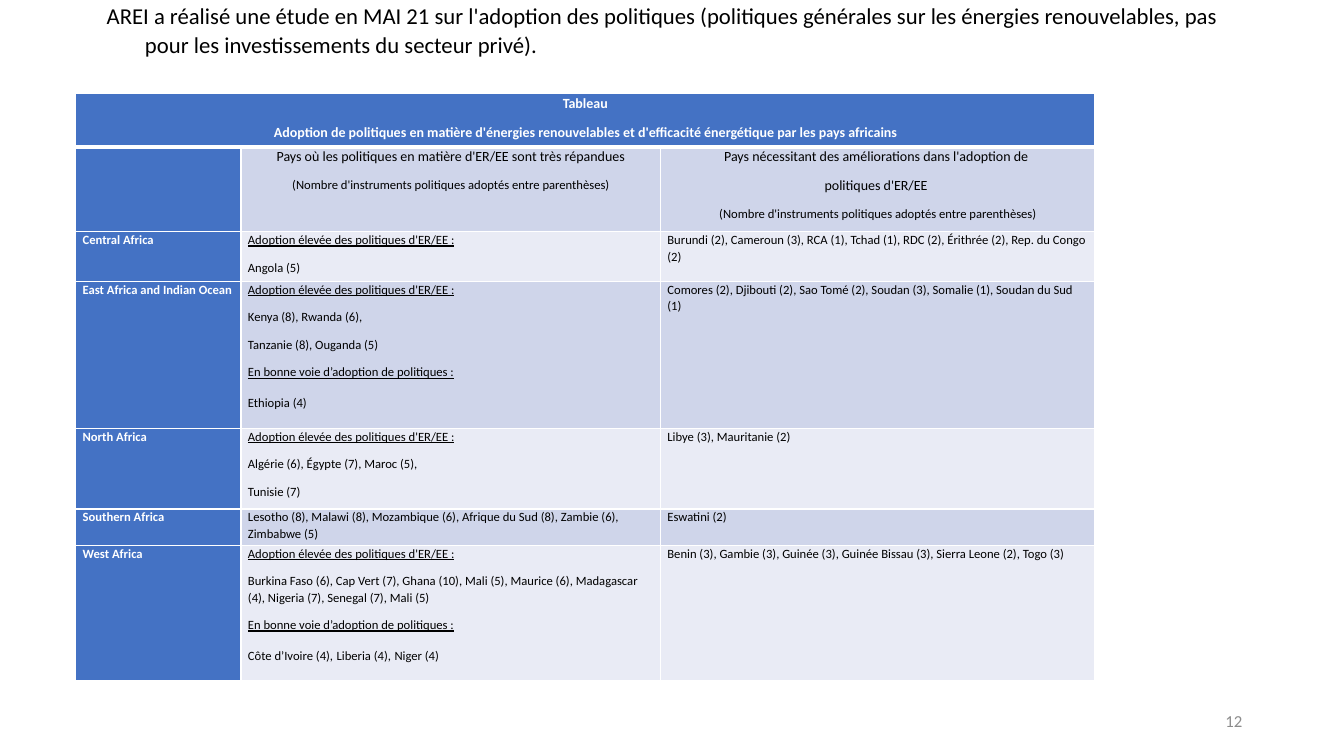
from lxml import etree
from pptx import Presentation, util as u
from pptx.dml.color import RGBColor
from pptx.enum import text as t
from pptx.oxml.ns import qn

WIDE, HIGH = 13.33, 7.5
FONT = "Calibri"
BLACK = RGBColor(0, 0, 0)
WHITE = RGBColor(255, 255, 255)
GREY = RGBColor(0x8C, 0x8C, 0x8C)
BLUE = RGBColor(0x44, 0x72, 0xC4)
DARK = RGBColor(0xCF, 0xD5, 0xEA)
PALE = RGBColor(0xE9, 0xEB, 0xF5)

COLS = [1.64, 4.16, 4.31]
ROWS = [0.53, 0.84, 0.49, 1.46, 0.8, 0.36, 1.34]

TITLE = ("AREI a réalisé une étude en MAI 21 sur l'adoption des politiques "
         "(politiques générales sur les énergies renouvelables, pas pour les "
         "investissements du secteur privé).")
HEAD = ["Tableau", "Adoption de politiques en matière d'énergies renouvelables "
        "et d'efficacité énergétique par les pays africains"]
NOTE = [("(Nombre d'instruments politiques adoptés entre parenthèses)", 9)]
HIGHLY = "Adoption élevée des politiques d'ER/EE :"
COMING = "En bonne voie d’adoption de politiques :"
GAP = (" ", 11)

# Region, widely adopting countries, countries to improve
AREAS = [
    ("Central Africa", [HIGHLY, "Angola (5)"],
     "Burundi (2), Cameroun (3), RCA (1), Tchad (1), RDC (2), Érithrée (2), "
     "Rep. du Congo (2)"),
    ("East Africa and Indian Ocean",
     [HIGHLY, "Kenya (8), Rwanda (6),", "Tanzanie (8), Ouganda (5)", COMING,
      [("Ethiopia (4)", 9), GAP]],
     "Comores (2), Djibouti (2), Sao Tomé (2), Soudan (3), Somalie (1), "
     "Soudan du Sud (1)"),
    ("North Africa",
     [HIGHLY, "Algérie (6), Égypte (7), Maroc (5),", "Tunisie (7)"],
     "Libye (3), Mauritanie (2)"),
    ("Southern Africa",
     ["Lesotho (8), Malawi (8), Mozambique (6), Afrique du Sud (8), "
      "Zambie (6), Zimbabwe (5)"],
     "Eswatini (2)"),
    ("West Africa",
     [HIGHLY,
      "Burkina Faso (6), Cap Vert (7), Ghana (10), Mali (5), Maurice (6), "
      "Madagascar (4), Nigeria (7), Senegal (7), Mali (5)",
      COMING,
      [("Côte d’Ivoire (4),", 9), GAP, ("Liberia (4),", 9), GAP,
       ("Niger (4)", 9)]],
     "Benin (3), Gambie (3), Guinée (3), Guinée Bissau (3), Sierra Leone (2), "
     "Togo (3)"),
]


def add_run(para, words, size, color, bold=False):
    run = para.add_run()
    run.text = words
    font = run.font
    font.name, font.size, font.bold = FONT, u.Pt(size), bold
    font.color.rgb = color
    font.underline = words in (HIGHLY, COMING)


def space(para):
    para.line_spacing, para.space_after = 1.07, u.Pt(8)


def add_box(slide, box):
    shape = slide.shapes.add_textbox(*map(u.Inches, box))
    frame = shape.text_frame
    frame.word_wrap = True
    frame.vertical_anchor = t.MSO_ANCHOR.MIDDLE
    return frame.paragraphs[0]


def add_title(slide, box):
    para = add_box(slide, box)
    space(para)
    props = para._p.get_or_add_pPr()
    props.set("marL", str(u.Inches(0.38)))
    props.set("indent", str(-u.Inches(0.38)))
    add_run(para, TITLE, 16.2, BLACK)


def add_number(slide, box):
    para = add_box(slide, box)
    para.alignment = t.PP_ALIGN.RIGHT
    add_run(para, "12", 12, GREY)


def add_edge(cell, side, width):
    line = etree.SubElement(cell._tc.get_or_add_tcPr(), qn("a:ln" + side),
                            w=str(u.Pt(width)))
    fill = etree.SubElement(line, qn("a:solidFill"))
    etree.SubElement(fill, qn("a:srgbClr"), val=str(WHITE))


def fill_cell(cell, paras, back, size=9, color=BLACK, bold=False, align=None):
    """Each paragraph is a string, or a list of (words, size) runs."""
    cell.margin_left = cell.margin_right = u.Inches(0.07)
    cell.margin_top = cell.margin_bottom = 0
    cell.fill.solid()
    cell.fill.fore_color.rgb = back
    frame = cell.text_frame
    for i, runs in enumerate(paras):
        para = frame.add_paragraph() if i else frame.paragraphs[0]
        para.alignment = align
        space(para)
        for words, points in [(runs, size)] if isinstance(runs, str) else runs:
            add_run(para, words, points, color, bold)


def add_grid(slide, box):
    table = slide.shapes.add_table(len(ROWS), len(COLS),
                                   *map(u.Inches, box)).table
    for col, width in zip(table.columns, COLS):
        col.width = u.Inches(width)
    for row, height in zip(table.rows, ROWS):
        row.height = u.Inches(height)

    # White rules, thick under the heading
    for r in range(len(ROWS)):
        for c in range(len(COLS)):
            for side in "LRTB":
                thick = (r, side) in ((0, "B"), (1, "T"))
                add_edge(table.cell(r, c), side, 3 if thick else 1)

    # Heading rows
    mid = t.PP_ALIGN.CENTER
    table.cell(0, 0).merge(table.cell(0, 2))
    fill_cell(table.cell(0, 0), HEAD, BLUE, 10, WHITE, True, mid)
    fill_cell(table.cell(1, 0), [], BLUE)
    fill_cell(table.cell(1, 1),
              ["Pays où les politiques en matière d'ER/EE sont très répandues",
               NOTE], DARK, 10, align=mid)
    fill_cell(table.cell(1, 2),
              ["Pays nécessitant des améliorations dans l'adoption de ",
               "politiques d'ER/EE ", NOTE], DARK, 10, align=mid)

    # One banded row per region
    for r, (area, good, weak) in enumerate(AREAS, 2):
        back = DARK if r % 2 else PALE
        fill_cell(table.cell(r, 0), [area], BLUE, color=WHITE, bold=True)
        fill_cell(table.cell(r, 1), good, back)
        fill_cell(table.cell(r, 2), [weak], back)


def main():
    deck = Presentation()
    deck.slide_width, deck.slide_height = u.Inches(WIDE), u.Inches(HIGH)
    slide = deck.slides.add_slide(deck.slide_layouts[6])
    add_title(slide, (0.96, 0.09, 11.46, 0.4))
    add_grid(slide, (0.75, 0.93, sum(COLS), sum(ROWS)))
    add_number(slide, (9.42, 6.95, 3, 0.4))
    deck.save("out.pptx")


if __name__ == "__main__":
    main()
